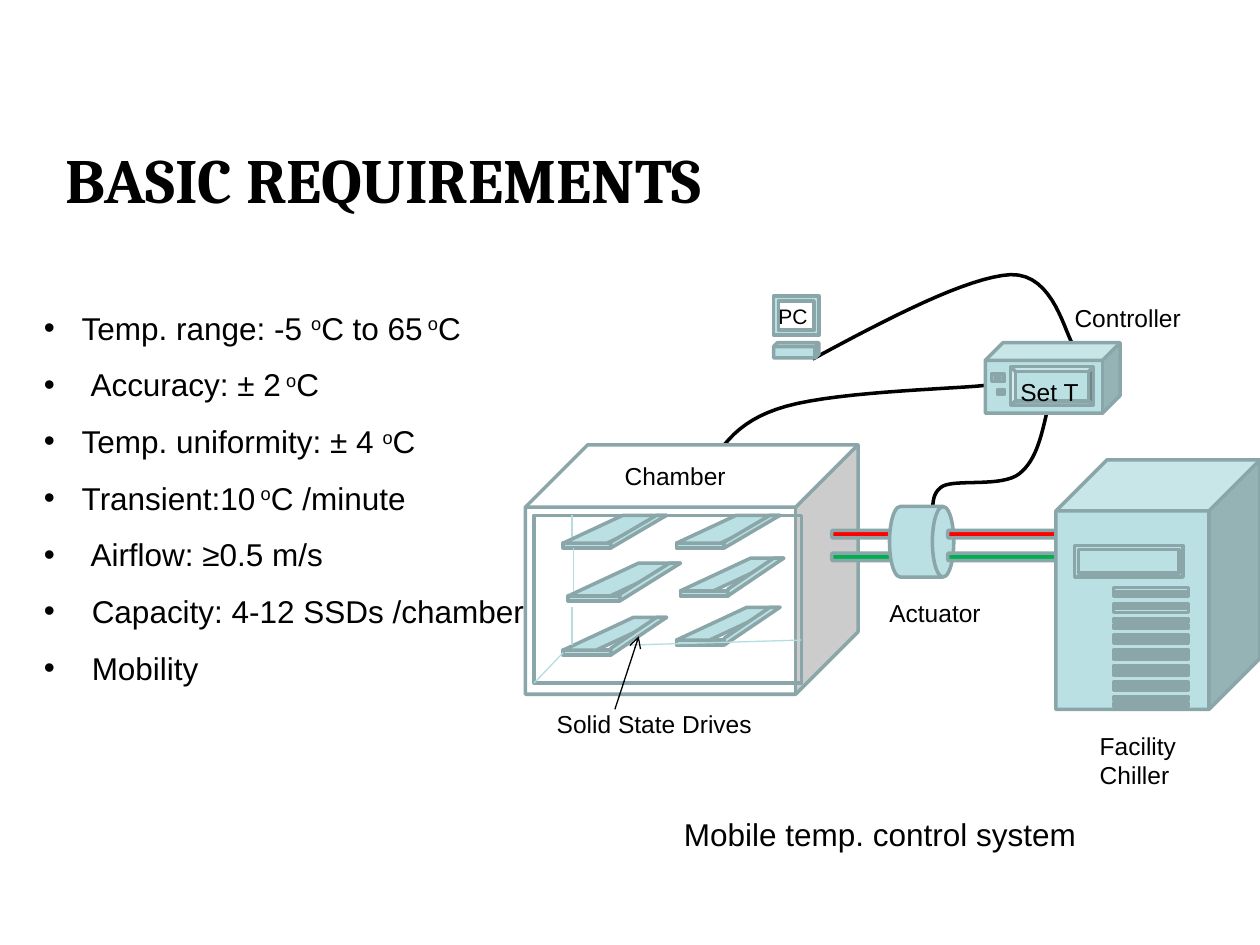
from lxml import etree
from pptx import Presentation
from pptx.dml.color import RGBColor
from pptx.enum.shapes import MSO_CONNECTOR, MSO_SHAPE
from pptx.enum.text import MSO_ANCHOR, MSO_AUTO_SIZE, PP_ALIGN
from pptx.oxml.ns import qn
from pptx.util import Inches, Pt

CUBE, RECT, CAN = MSO_SHAPE.CUBE, MSO_SHAPE.RECTANGLE, MSO_SHAPE.CAN
SLANT, STRIPE = MSO_SHAPE.PARALLELOGRAM, MSO_SHAPE.DIAGONAL_STRIPE
FRAME, BEVEL, EQUAL = MSO_SHAPE.FRAME, MSO_SHAPE.BEVEL, MSO_SHAPE.MATH_EQUAL
DRUM = MSO_SHAPE.FLOWCHART_DIRECT_ACCESS_STORAGE
BUTTON = MSO_SHAPE.ACTION_BUTTON_FORWARD_OR_NEXT
STRAIGHT = MSO_CONNECTOR.STRAIGHT
GROW = MSO_AUTO_SIZE.SHAPE_TO_FIT_TEXT

BLACK = RGBColor(0, 0, 0)
WHITE = RGBColor(255, 255, 255)
AQUA = RGBColor(0xBB, 0xE0, 0xE3)
EDGE = RGBColor(0x8A, 0xA6, 0xA8)
PALE = RGBColor(0xB6, 0xDC, 0xDF)
RED = RGBColor(255, 0, 0)
GREEN = RGBColor(0, 0xB0, 0x50)

TITLE = "BASIC REQUIREMENTS"
NEEDS = [
    (0.3, ["Temp. range: -5 ", "o", "C to 65", " o", "C"]),
    (0.37, ["Accuracy: ± 2", " o", "C"]),
    (0.3, ["Temp. uniformity: ± 4 ", "o", "C"]),
    (0.3, ["Transient:10", " o", "C /minute"]),
    (0.37, ["Airflow: ≥0.5 m/s"]),
    (0.38, ["Capacity: 4-12 SSDs /chamber"]),
    (0.38, ["Mobility"]),
]
LABELS = [
    ("Chamber", (4.86, 3.61, 1.43, 0.34), 14, True),
    ("PC", (6.08, 2.36, 0.55, 0.3), 12, True),
    ("Controller", (8.43, 2.36, 1.26, 0.34), 14, True),
    ("Facility Chiller", (8.63, 5.75, 1.07, 0.57), 14, True),
    ("Actuator", (6.96, 4.7, 0.97, 0.34), 14, False),
    ("Solid State Drives", (4.32, 5.58, 2.29, 0.34), 14, True),
    ("Set T", (8, 2.94, 0.8, 0.34), 14, True),
    ("Mobile temp. control system", (5.33, 6.42, 3.34, 0.4), 18, False),
]
WIRES = [
    [(5.54, 3.9), (5.66, 3.64), (5.78, 3.38), (6.16, 3.25),
     (6.54, 3.11), (7.53, 3.09), (7.81, 3.06)],
    [(6.45, 2.85), (7.06, 2.52), (7.68, 2.2), (8.02, 2.18),
     (8.37, 2.17), (8.45, 2.66), (8.53, 2.76)],
    [(8.32, 3.22), (8.27, 3.44), (8.23, 3.65), (8.09, 3.76),
     (7.95, 3.87), (7.59, 3.8), (7.48, 3.86),
     (7.36, 3.93), (7.42, 4.11), (7.41, 4.16)],
]
DRIVES = [
    (4.47, 4.09, 0.82, 0.22), (5.37, 4.09, 0.82, 0.22),
    (5.4, 4.43, 0.82, 0.26), (5.37, 4.82, 0.82, 0.26),
    (4.47, 4.9, 0.82, 0.26), (4.51, 4.47, 0.89, 0.26),
]
SEAMS = [
    (4.54, 4.09, 4.54, 4.26), (4.55, 4.35, 4.55, 4.69),
    (4.54, 4.82, 4.54, 5.12), (4.24, 5.42, 4.47, 5.18),
    (4.99, 5.12, 6.36, 5.08),
]
PIPES = [(6.6, 0.76), (7.52, 1.27)]
FLOWS = [(4.24, RED), (4.42, GREEN)]
GEAR = [
    (CUBE, (8.38, 3.65, 1.62, 1.98)),
    (FRAME, (6.14, 2.35, 0.36, 0.31)),
    (CUBE, (6.14, 2.72, 0.36, 0.12)),
    (FRAME, (8.53, 4.33, 0.86, 0.25)),
    (CUBE, (7.82, 2.72, 1.07, 0.56)),
    (BEVEL, (8.02, 2.91, 0.66, 0.31)),
    (BUTTON, (7.87, 2.97, 0.1, 0.06)),
    (BUTTON, (7.92, 3.09, 0.05, 0.04)),
]
VENTS, VENT_TOP, VENT_GAP = 8, 4.64, 0.124

deck = Presentation()
deck.slide_width, deck.slide_height = Inches(10), Inches(7.5)
slide = deck.slides.add_slide(deck.slide_layouts[5])
shapes = slide.shapes


def style(font, **extra):
    look = {"name": "Arial", "size": Pt(18), "bold": False, **extra}
    for key, value in look.items():
        setattr(font, key, value)
    font.color.rgb = BLACK


def solid(kind, box, fill=AQUA, adjust=None, turn=0):
    part = shapes.add_shape(kind, *map(Inches, box))
    part.shadow.inherit = False
    part.rotation = turn
    if adjust:
        part.adjustments[0] = adjust
    if fill is None:
        part.fill.background()
    else:
        part.fill.solid()
        part.fill.fore_color.rgb = fill
    part.line.color.rgb = EDGE
    part.line.width = Pt(2)


def wire(knots):
    dots = []
    for i in range(0, len(knots) - 1, 3):
        for step in range(1, 17):
            t = step / 16
            mix = ((1 - t) ** 3, 3 * t * (1 - t) ** 2, 3 * t * t * (1 - t), t ** 3)
            dots.append(tuple(
                Inches(sum(m * p[axis] for m, p in zip(mix, knots[i:i + 4])))
                for axis in (0, 1)))
    form = shapes.build_freeform(*map(Inches, knots[0]))
    form.add_line_segments(dots, close=False)
    curve = form.convert_to_shape()
    curve.shadow.inherit = False
    curve.fill.background()
    curve.line.color.rgb = BLACK
    curve.line.width = Pt(2)


def thin(ends, color, arrow=False):
    link = shapes.add_connector(STRAIGHT, *map(Inches, ends))
    link.line.color.rgb = color
    link.line.width = Pt(0.75)
    if arrow:
        etree.SubElement(link.line._get_or_add_ln(), qn("a:tailEnd"), type="arrow")
    etree.SubElement(link._element.spPr, qn("a:effectLst"))


def drive(x, y, w, h):
    base, lip = 0.46 * w, 0.04
    solid(RECT, (x, y + h, base, lip))
    solid(SLANT, (x, y, w, h), adjust=2.146)
    solid(STRIPE, (x + base, y, w - base, h + lip), adjust=0.821)


def pipe(left, span):
    bore = 0.06
    for mid, color in FLOWS:
        box = (left + (span - bore) / 2, mid - span / 2, bore, span)
        solid(CAN, box, color, turn=90)


def frame(box, wrap=True):
    area = shapes.add_textbox(*map(Inches, box)).text_frame
    area.word_wrap = wrap
    area.auto_size = GROW
    return area


head = shapes.title
head.left, head.top, head.width, head.height = map(Inches, (0.42, 1.08, 7.33, 0.75))
head.text_frame.text = TITLE
head.text_frame.vertical_anchor = MSO_ANCHOR.MIDDLE
line = head.text_frame.paragraphs[0]
line.alignment = PP_ALIGN.LEFT
line.line_spacing = 0.9
style(line.runs[0].font, name="Cambria", size=Pt(36), bold=True)

for knots in WIRES:
    wire(knots)
solid(CUBE, (4.17, 3.53, 2.64, 1.98), WHITE)
solid(RECT, (4.24, 4.09, 2.12, 1.33), None)
for box in DRIVES:
    drive(*box)
for ends in SEAMS:
    thin(ends, PALE)
pipe(*PIPES[0])
solid(DRUM, (7.06, 4.02, 0.51, 0.56))
pipe(*PIPES[1])
for kind, box in GEAR:
    solid(kind, box)
for i in range(VENTS):
    solid(EQUAL, (8.73, VENT_TOP + i * VENT_GAP, 0.81, 0.12))
for text, box, size, wrap in LABELS:
    area = frame(box, wrap)
    area.text = text
    style(area.paragraphs[0].runs[0].font, size=Pt(size))
thin((4.88, 5.63, 5.07, 5.05), BLACK, True)

area = frame((0.25, 2.25, 4.58, 3.58))
for i, (inset, bits) in enumerate(NEEDS):
    line = area.add_paragraph() if i else area.paragraphs[0]
    line.line_spacing = 1.5
    props = line._p.get_or_add_pPr()
    props.set("marL", str(Inches(inset)))
    props.set("indent", str(-Inches(inset)))
    etree.SubElement(props, qn("a:buFont"), typeface="Arial")
    etree.SubElement(props, qn("a:buChar"), char="•")
    for j, bit in enumerate(bits):
        run = line.add_run()
        run.text = bit
        style(run.font)
        if j % 2:
            run.font._element.set("baseline", "30000")

deck.save("out.pptx")
